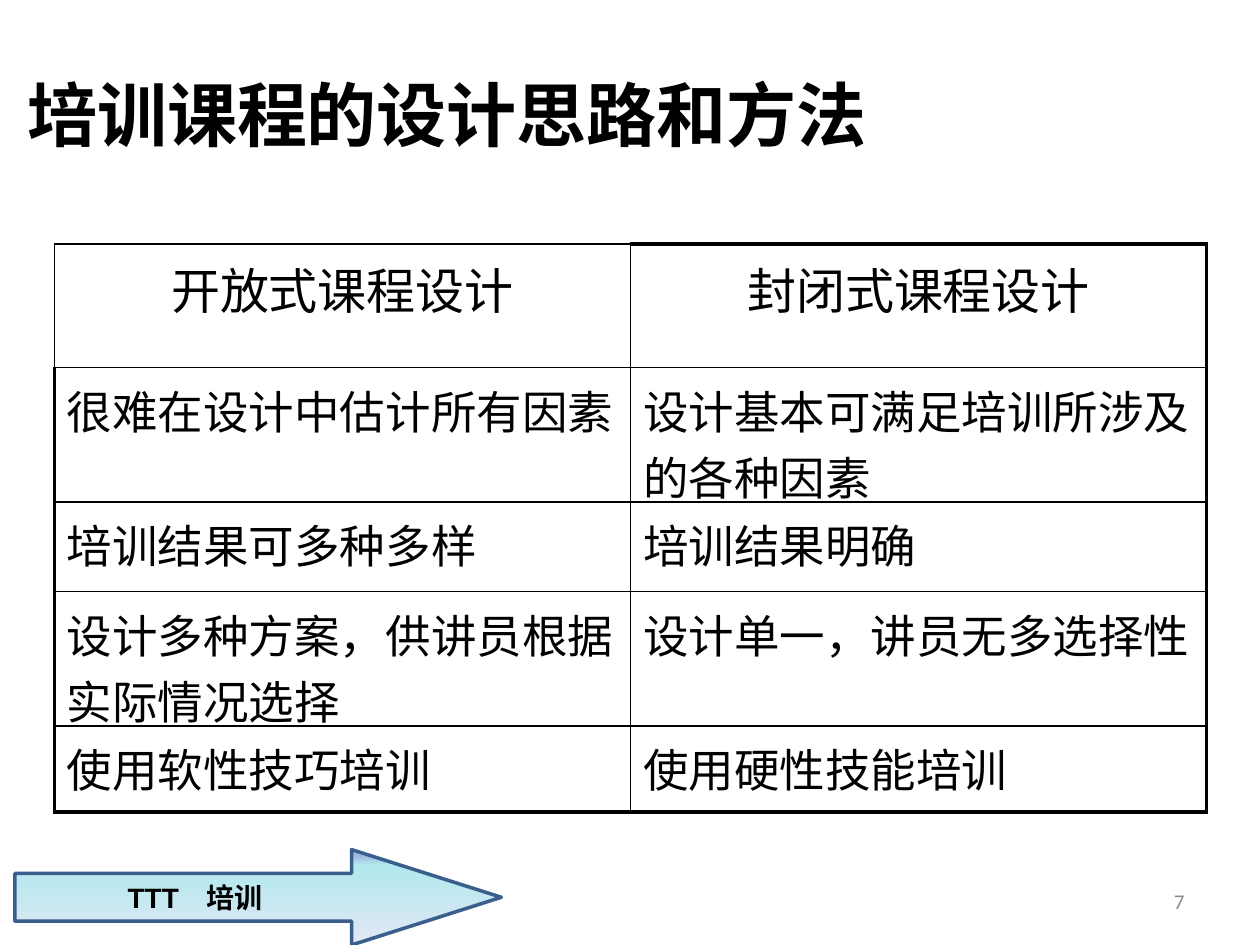
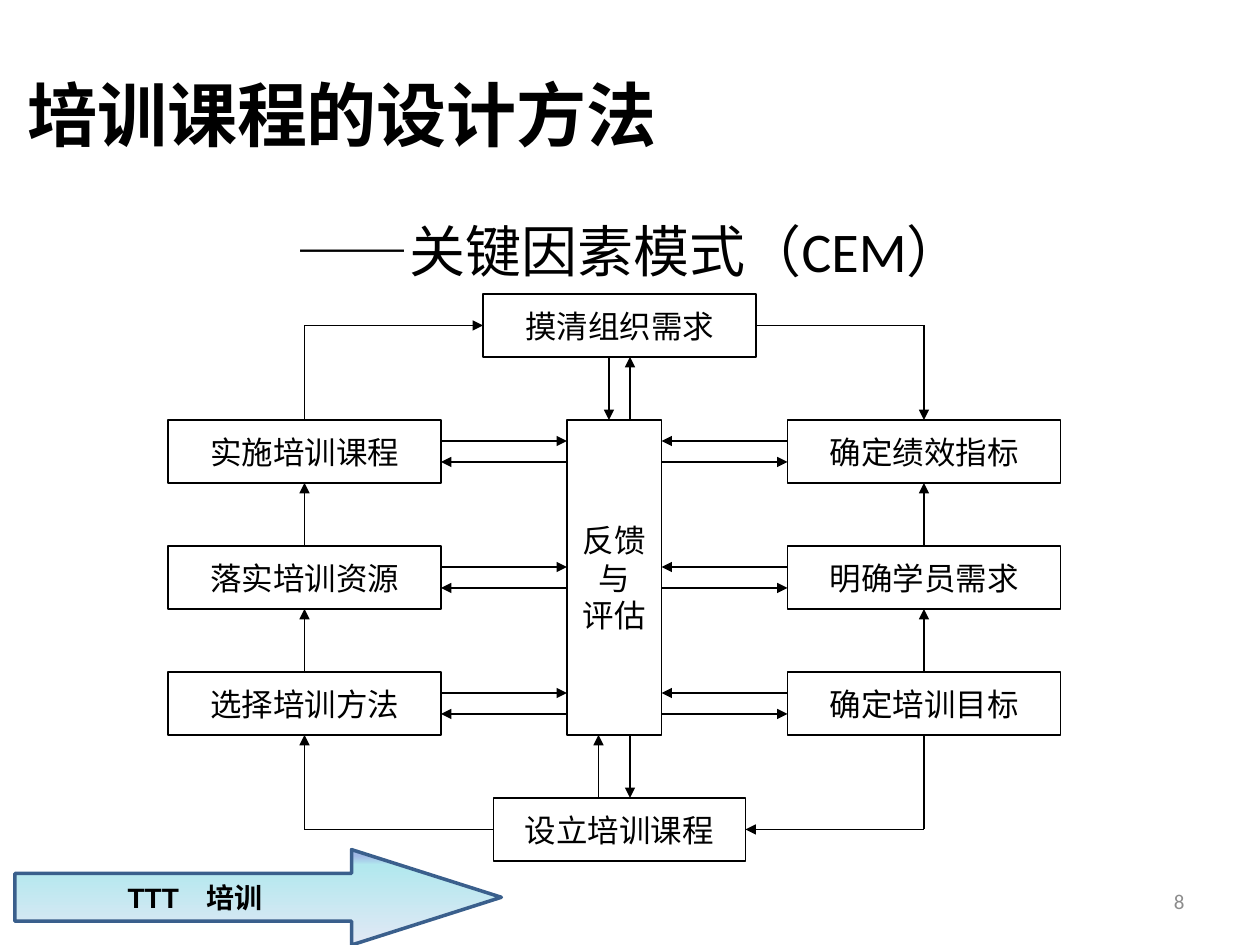
from lxml.etree import SubElement
from pptx import Presentation
from pptx.dml.color import RGBColor
from pptx.enum.shapes import MSO_CONNECTOR, MSO_SHAPE
from pptx.enum.text import MSO_ANCHOR, PP_ALIGN
from pptx.oxml.ns import qn
from pptx.util import Pt

BLACK, WHITE, GREY = "000000", "FFFFFF", "8C8C8C"
BANNER_EDGE = "3A5F8C"
BANNER_STOPS = [(0, "9AB5E4"), (4, "A0B9E5"), (7, "A2BBE6"), (16, "B2E8EE"), (100, "E1E8F5")]
rgb = RGBColor.from_string


def write(frame, text, size, font="Calibri", color=BLACK, bold=False,
          align=PP_ALIGN.LEFT, anchor=MSO_ANCHOR.MIDDLE, wrap=True):
    """Fill a text frame, one paragraph per line of text."""
    frame.word_wrap = wrap
    frame.vertical_anchor = anchor
    frame.text = text
    for paragraph in frame.paragraphs:
        paragraph.alignment = align
        paragraph.font.size = Pt(size)
        paragraph.font.name = font
        paragraph.font.bold = bold
        paragraph.font.color.rgb = rgb(color)


def connect(slide, x1, y1, x2, y2, arrow=True):
    """Draw a thin black line, with an arrowhead at its end if wanted."""
    link = slide.shapes.add_connector(MSO_CONNECTOR.STRAIGHT, Pt(x1), Pt(y1), Pt(x2), Pt(y2))
    link.line.color.rgb = rgb(BLACK)
    link.line.width = Pt(0.75)
    if arrow:
        SubElement(link.line._get_or_add_ln(), qn("a:tailEnd"), type="triangle")
    SubElement(link._element.spPr, qn("a:effectLst"))


prs = Presentation()
prs.slide_width, prs.slide_height = Pt(720), Pt(540)

# Shared parts: banner arrow, title, page number
slides = []
for number, title in [(7, "培训课程的设计思路和方法"), (8, "培训课程的设计方法")]:
    slide = prs.slides.add_slide(prs.slide_layouts[6])
    slides.append(slide)

    banner = slide.shapes.add_shape(MSO_SHAPE.RIGHT_ARROW, Pt(8.5), Pt(485.5), Pt(278), Pt(54.5))
    banner.adjustments[0], banner.adjustments[1] = 0.5, 1.57
    banner.shadow.inherit = False
    banner.fill.gradient()
    banner.fill.gradient_angle = 270
    stops = banner._element.spPr.find(qn("a:gradFill")).find(qn("a:gsLst"))
    stops.clear()
    for percent, color in BANNER_STOPS:
        stop = SubElement(stops, qn("a:gs"), pos=str(percent * 1000))
        SubElement(stop, qn("a:srgbClr"), val=color)
    banner.line.color.rgb = rgb(BANNER_EDGE)
    banner.line.width = Pt(2)
    write(banner.text_frame, "TTT　培训", 16, font="Arial", bold=True)
    banner.text_frame.margin_left = Pt(64.5)

    heading = slide.shapes.add_textbox(Pt(8.5), Pt(20), Pt(527), Pt(90))
    write(heading.text_frame, title, 40, bold=True)
    page = slide.shapes.add_textbox(Pt(644), Pt(500.5), Pt(40), Pt(29))
    write(page.text_frame, str(number), 12, color=GREY, align=PP_ALIGN.RIGHT)

comparison_slide, model_slide = slides

# Comparison table
comparison = [
    ("开放式课程设计", "封闭式课程设计"),
    ("很难在设计中估计所有因素", "设计基本可满足培训所涉及的各种因素"),
    ("培训结果可多种多样", "培训结果明确"),
    ("设计多种方案，供讲员根据实际情况选择", "设计单一，讲员无多选择性"),
    ("使用软性技巧培训", "使用硬性技能培训"),
]
row_heights = [70.5, 77, 51, 77, 49]
table = comparison_slide.shapes.add_table(
    5, 2, Pt(31), Pt(139.5), Pt(658.5), Pt(sum(row_heights))).table
table.first_row = table.horz_banding = False
for column in table.columns:
    column.width = Pt(329.25)
last = len(comparison) - 1
for r, texts in enumerate(comparison):
    table.rows[r].height = Pt(row_heights[r])
    for c, text in enumerate(texts):
        cell = table.cell(r, c)
        header = r == 0
        write(cell.text_frame, text, 28 if header else 26, font="Times New Roman",
              align=PP_ALIGN.CENTER if header else PP_ALIGN.LEFT, anchor=MSO_ANCHOR.TOP)
        cell.margin_top = Pt(5)
        # Heavy outer frame, except around the top left cell
        heavy = {"lnL": c == 0 and not header, "lnR": c == 1,
                 "lnT": header and c == 1, "lnB": r == last}
        for side, is_heavy in heavy.items():
            border = SubElement(cell._tc.get_or_add_tcPr(), qn("a:" + side),
                                w=str(Pt(2.25 if is_heavy else 1)))
            SubElement(SubElement(border, qn("a:solidFill")), qn("a:srgbClr"), val=BLACK)
        cell.fill.solid()
        cell.fill.fore_color.rgb = rgb(WHITE)

# Subtitle of the model
subtitle = model_slide.shapes.add_textbox(Pt(54), Pt(120), Pt(612), Pt(378))
write(subtitle.text_frame, "——关键因素模式（CEM）", 32, align=PP_ALIGN.CENTER, anchor=MSO_ANCHOR.TOP)

# Model grid
LEFT, RIGHT, STEP_W, STEP_H = 96, 450, 156, 36
HUB_LEFT, HUB_RIGHT, HUB_TOP, HUB_BOTTOM = 324, 378, 240, 420
TOP_Y, BOTTOM_Y = 168, 456
TOP_LEFT, TOP_RIGHT, BOTTOM_LEFT, BOTTOM_RIGHT = 276, 432, 282, 426
row_tops = [HUB_TOP + 72 * i for i in range(3)]
left_mid, right_mid = LEFT + STEP_W / 2, RIGHT + STEP_W / 2
top_mid, bottom_mid = TOP_Y + STEP_H / 2, BOTTOM_Y + STEP_H / 2

# Steps around the feedback hub
steps = [
    ("摸清组织需求", TOP_LEFT, TOP_Y, STEP_W, STEP_H),
    ("反馈\n与\n评估", HUB_LEFT, HUB_TOP, HUB_RIGHT - HUB_LEFT, HUB_BOTTOM - HUB_TOP),
    ("设立培训课程", BOTTOM_LEFT, BOTTOM_Y, BOTTOM_RIGHT - BOTTOM_LEFT, STEP_H),
]
left_steps = ["实施培训课程", "落实培训资源", "选择培训方法"]
right_steps = ["确定绩效指标", "明确学员需求", "确定培训目标"]
for y, left_text, right_text in zip(row_tops, left_steps, right_steps):
    steps.append((left_text, LEFT, y, STEP_W, STEP_H))
    steps.append((right_text, RIGHT, y, STEP_W, STEP_H))
for text, x, y, w, h in steps:
    step = model_slide.shapes.add_shape(MSO_SHAPE.RECTANGLE, Pt(x), Pt(y), Pt(w), Pt(h))
    step.shadow.inherit = False
    step.fill.solid()
    step.fill.fore_color.rgb = rgb(WHITE)
    step.line.color.rgb = rgb(BLACK)
    step.line.width = Pt(0.75)
    write(step.text_frame, text, 18, align=PP_ALIGN.CENTER, wrap=False)

# Pairs of arrows between each side step and the hub
for y in row_tops:
    to_hub, from_hub = y + 12, y + 24
    connect(model_slide, LEFT + STEP_W, to_hub, HUB_LEFT, to_hub)
    connect(model_slide, HUB_LEFT, from_hub, LEFT + STEP_W, from_hub)
    connect(model_slide, RIGHT, to_hub, HUB_RIGHT, to_hub)
    connect(model_slide, HUB_RIGHT, from_hub, RIGHT, from_hub)

# Upward arrows between neighbouring side steps
for x in (left_mid, right_mid):
    for y in row_tops[1:]:
        connect(model_slide, x, y, x, y - STEP_H)

# Arrows between the hub and the top and bottom steps
for x, y1, y2 in [(348, TOP_Y + STEP_H, HUB_TOP), (360, HUB_TOP, TOP_Y + STEP_H),
                  (342, BOTTOM_Y, HUB_BOTTOM), (360, HUB_BOTTOM, BOTTOM_Y)]:
    connect(model_slide, x, y1, x, y2)

# Corner routes: start, bend, end
for start, bend, end in [
    ((TOP_RIGHT, top_mid), (right_mid, top_mid), (right_mid, HUB_TOP)),
    ((left_mid, HUB_TOP), (left_mid, top_mid), (TOP_LEFT, top_mid)),
    ((BOTTOM_LEFT, bottom_mid), (left_mid, bottom_mid), (left_mid, HUB_BOTTOM)),
    ((right_mid, HUB_BOTTOM), (right_mid, bottom_mid), (BOTTOM_RIGHT, bottom_mid)),
]:
    connect(model_slide, *start, *bend, arrow=False)
    connect(model_slide, *bend, *end)

prs.save("out.pptx")
